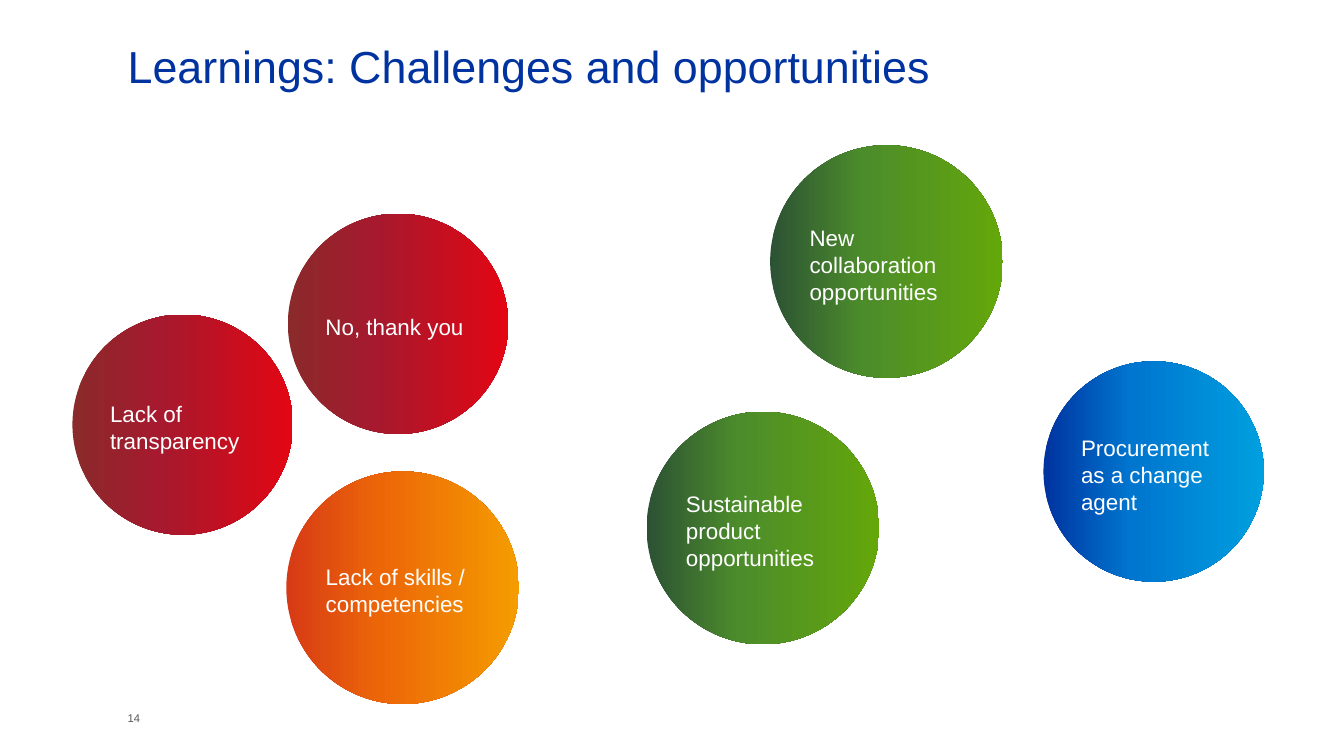
from copy import deepcopy

from pptx import Presentation
from pptx.dml.color import RGBColor
from pptx.enum.shapes import MSO_SHAPE
from pptx.enum.text import MSO_ANCHOR, PP_ALIGN
from pptx.oxml.ns import qn
from pptx.util import Pt

FONT = "Arial"
BARRIER = ("8A2A2B", "A6192E", "E30613")
SKILLS = ("D73A16", "EC6608", "F59C00")
OPPORTUNITY = ("2C5234", "4C8C2B", "64A70B")
CHANGE = ("0033A0", "0076CF", "009FDF")
STOPS = (0, 0.4, 1)
SMALL, LARGE = 118, 124.6

# Label, left, top, diameter, gradient
CIRCLES = [
    ("No, thank you", 154.2, 114.5, SMALL, BARRIER),
    ("Lack of transparency", 38.8, 168.5, SMALL, BARRIER),
    ("Lack of skills / competencies", 153.4, 252.6, LARGE, SKILLS),
    ("New collaboration opportunities", 412.6, 77.8, LARGE, OPPORTUNITY),
    ("Sustainable product opportunities", 346.4, 220.6, LARGE, OPPORTUNITY),
    ("Procurement as a change agent", 559, 193.6, SMALL, CHANGE),
]


def color(hex_value):
    return RGBColor.from_string(hex_value)


def write(shape, text, size, hex_value, insets=(0, 0, 0, 0),
          anchor=MSO_ANCHOR.MIDDLE, wrap=True):
    frame = shape.text_frame
    frame.word_wrap = wrap
    frame.vertical_anchor = anchor
    (frame.margin_left, frame.margin_top,
     frame.margin_right, frame.margin_bottom) = map(Pt, insets)
    paragraph = frame.paragraphs[0]
    paragraph.text = text
    paragraph.alignment = PP_ALIGN.LEFT
    paragraph.font.name = FONT
    paragraph.font.size = Pt(size)
    paragraph.font.color.rgb = color(hex_value)
    return paragraph


def fill_gradient(shape, hex_values):
    shape.fill.gradient()
    shape.fill.gradient_angle = 0
    # The default gradient has two stops; a third is added
    first = shape._element.spPr.find(".//" + qn("a:gs"))
    first.addnext(deepcopy(first))
    for stop, position, value in zip(shape.fill.gradient_stops, STOPS, hex_values):
        stop.position = position
        stop.color.rgb = color(value)


def add_title(slide, left, top, width, height):
    title = slide.shapes.add_textbox(Pt(left), Pt(top), Pt(width), Pt(height))
    heading = write(title, "Learnings: Challenges and opportunities", 24,
                    "0033A0", anchor=MSO_ANCHOR.TOP)
    heading.line_spacing = 0.91


def add_page_number(slide, left, top, width, height):
    number = slide.shapes.add_textbox(Pt(left), Pt(top), Pt(width), Pt(height))
    write(number, "14", 6, "595959", wrap=False)


def add_circle(slide, label, left, top, diameter, gradient):
    circle = slide.shapes.add_shape(
        MSO_SHAPE.OVAL, Pt(left), Pt(top), Pt(diameter), Pt(diameter))
    circle.shadow.inherit = False
    circle.line.fill.background()
    fill_gradient(circle, gradient)
    write(circle, label, 12, "FFFFFF", insets=(2.88, 2.88, 2.88, 0))


def main():
    deck = Presentation()
    deck.slide_width, deck.slide_height = Pt(720), Pt(405)
    slide = deck.slides.add_slide(deck.slide_layouts[6])

    add_title(slide, 68.4, 23.8, 499, 59.8)
    add_page_number(slide, 68.4, 377.3, 7.2, 14.4)
    # Challenges on the left, opportunities on the right
    for circle in CIRCLES:
        add_circle(slide, *circle)

    deck.save("out.pptx")


if __name__ == "__main__":
    main()
